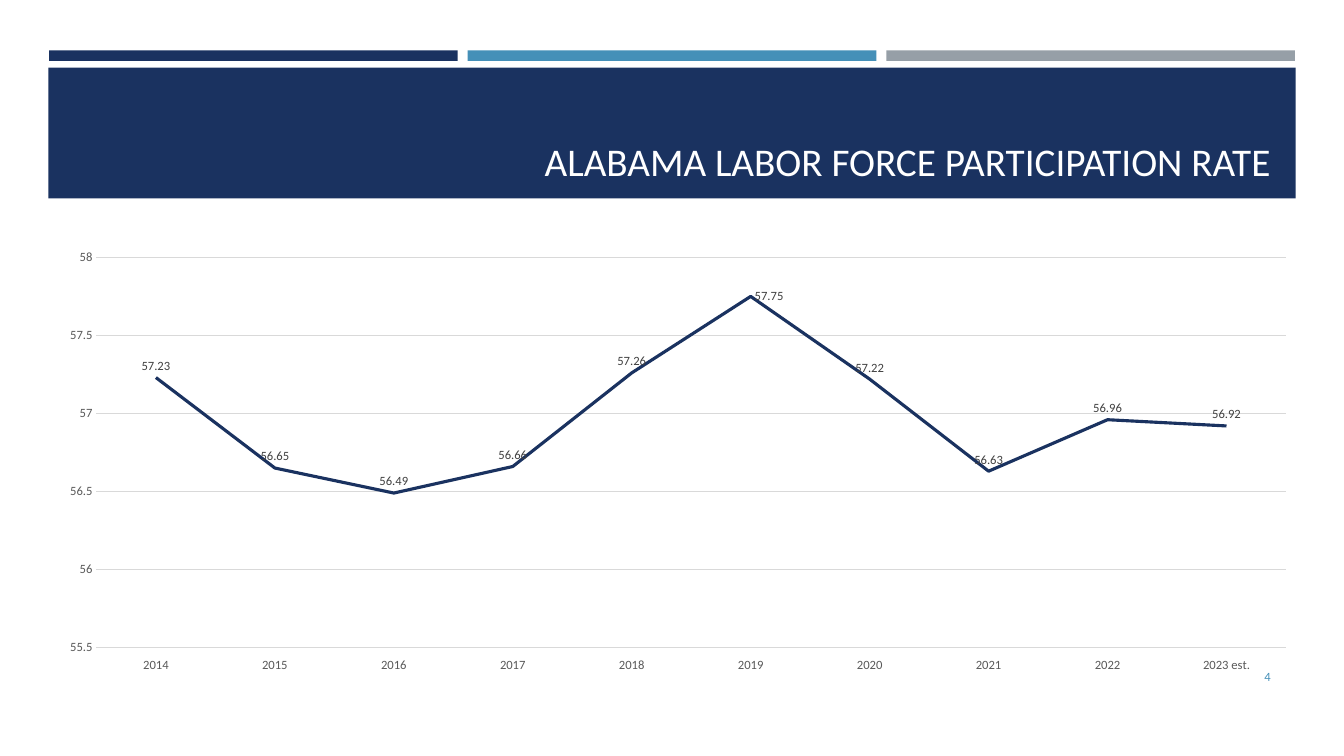
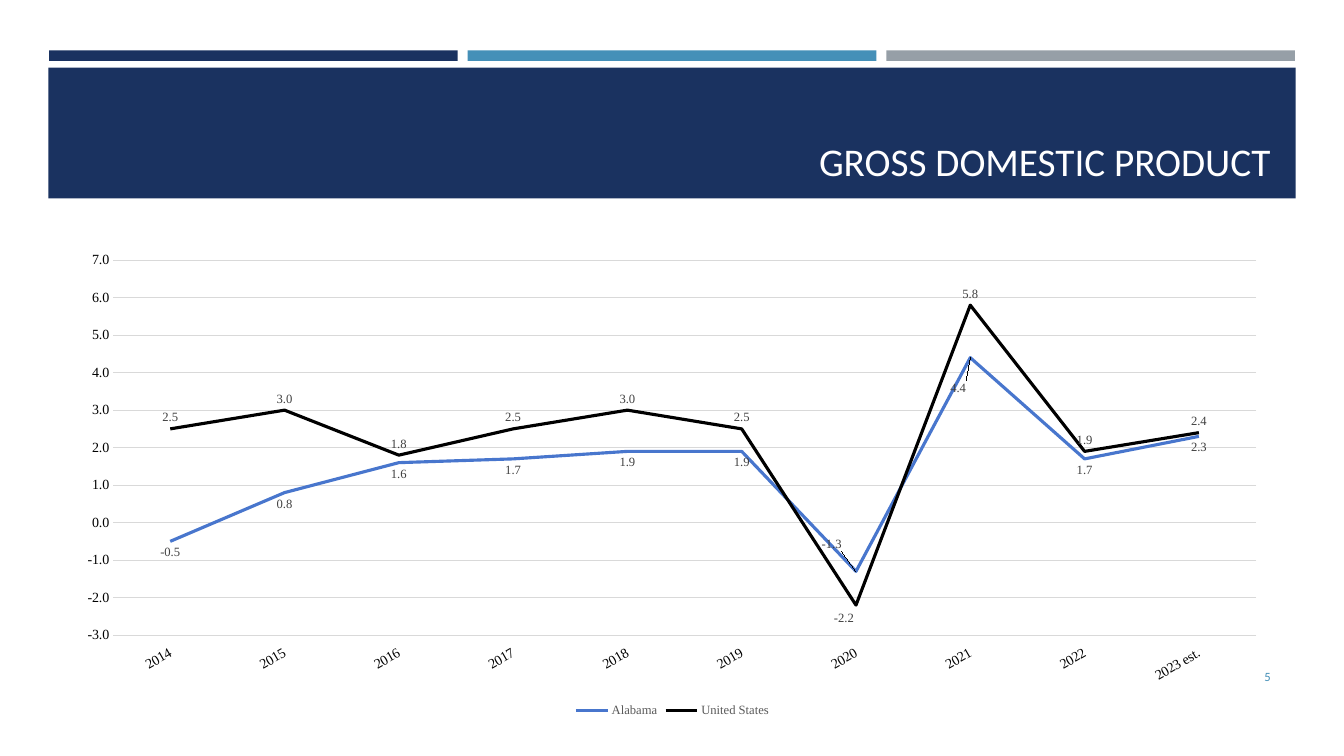
from lxml import etree
from pptx import Presentation
from pptx import util as u
from pptx.chart import data
from pptx.dml.color import RGBColor
from pptx.enum import chart as ch, shapes, text
from pptx.oxml import ns

NAVY, BLUE, GRAY = "1A3260", "4590B8", "969FA7"
WHITE, BLACK, RULE, DIM, DARK = "FFFFFF", "000000", "D9D9D9", "595959", "404040"
SANS, SERIF = "Calibri", "Times New Roman"
YEARS = [str(y) for y in range(2014, 2023)] + ["2023 est."]
POS = ch.XL_LABEL_POSITION


def color(code):
    return RGBColor.from_string(code)


class Deck:
    """Holds the shared style and the current slide; lengths are percent of the slide."""

    def __init__(self):
        self.prs = Presentation()
        self.prs.slide_width = u.Inches(13.33)
        self.prs.slide_height = u.Inches(7.5)

    def box(self, x, y, w, h):
        wide, high = self.prs.slide_width, self.prs.slide_height
        return [int(part * side / 100) for part, side in
                ((x, wide), (y, high), (w, wide), (h, high))]

    def style(self, font, size, code, face=SANS):
        font.size, font.name = u.Pt(size), face
        font.color.rgb = color(code)

    def stroke(self, line, code, width):
        line.color.rgb = color(code)
        line.width = u.Pt(width)

    def page(self, title, number):
        self.slide = self.prs.slides.add_slide(self.prs.slide_layouts[5])
        self.band(3.6, 8.93, 92.8, 17.33, NAVY)
        for i, code in enumerate((NAVY, BLUE, GRAY)):
            self.band(3.65 + i * 31.15, 6.67, 30.4, 1.4, code)
        self.title(title)
        self.number(number)

    def band(self, x, y, w, h, code):
        band = self.slide.shapes.add_shape(
            shapes.MSO_SHAPE.RECTANGLE, *self.box(x, y, w, h))
        band.shadow.inherit = False
        band.fill.solid()
        band.fill.fore_color.rgb = color(code)
        band.line.fill.background()
        self.slide.shapes._spTree.insert(2, band._element)

    def title(self, words):
        head = self.slide.shapes.title
        head.left, head.top, head.width, head.height = self.box(4.8, 10.27, 90.47, 14.8)
        self.words(head.text_frame, words, 28, WHITE, text.MSO_ANCHOR.BOTTOM)

    def number(self, value):
        note = self.slide.shapes.add_textbox(*self.box(86.65, 86.8, 8.63, 5.33))
        self.words(note.text_frame, str(value), 9, BLUE, text.MSO_ANCHOR.MIDDLE)

    def words(self, frame, words, size, code, anchor):
        frame.text, frame.word_wrap = words, True
        frame.vertical_anchor = anchor
        para = frame.paragraphs[0]
        para.alignment = text.PP_ALIGN.RIGHT
        self.style(para.font, size, code)

    def chart(self, area, plot, rows, scale, fmt, face, size, code):
        table = data.CategoryChartData(number_format=fmt)
        table.categories = YEARS
        for name, vals, *_ in rows:
            table.add_series(name, vals)
        graph = self.slide.shapes.add_chart(
            ch.XL_CHART_TYPE.LINE, *self.box(*area), table).chart
        graph.has_title = graph.has_legend = False
        self.style(graph.font, 10, BLACK, face)
        self.axes(graph, scale, fmt, face, size, code)
        self.place(graph._chartSpace.chart.plotArea, 0, plot, True)
        for line, (_, _, tint, spot, moves) in zip(graph.plots[0].series, rows):
            line.smooth = False
            self.stroke(line.format.line, tint, 2.25)
            self.labels(line, spot, moves, fmt, face)
        return graph

    def axes(self, graph, scale, fmt, face, size, code):
        cat, val = graph.category_axis, graph.value_axis
        for axis in (cat, val):
            axis.major_tick_mark = axis.minor_tick_mark = ch.XL_TICK_MARK.NONE
            self.style(axis.tick_labels.font, size, code, face)
        cat.tick_label_position = ch.XL_TICK_LABEL_POSITION.LOW
        self.stroke(cat.format.line, RULE, 0.75)
        val.minimum_scale, val.maximum_scale, val.major_unit = scale
        val.tick_labels.number_format = fmt
        val.tick_labels.number_format_is_linked = False
        val.format.line.fill.background()
        self.stroke(val.major_gridlines.format.line, RULE, 0.75)

    def labels(self, line, spot, moves, fmt, face):
        tags = line.data_labels
        tags.show_value, tags.position = True, spot
        tags.number_format, tags.number_format_is_linked = fmt, False
        self.style(tags.font, 9, DARK, face)
        for i, (side, shift) in moves.items():
            tag = line.points[i].data_label
            self.style(tag.font, 9, DARK, face)
            tag.position = side
            if shift:
                nodes = tags._element.findall(ns.qn("c:dLbl"))
                node = next(n for n in nodes
                            if n.find(ns.qn("c:idx")).get("val") == str(i))
                self.place(node, 1, shift)

    def place(self, node, at, spots, inner=False):
        for old in node.findall(ns.qn("c:layout")):
            node.remove(old)
        outer = etree.Element(ns.qn("c:layout"))
        hand = etree.SubElement(outer, ns.qn("c:manualLayout"))
        pairs = list(zip("xywh", spots))
        if inner:
            pairs = [("layoutTarget", "inner"), ("xMode", "edge"), ("yMode", "edge")] + pairs
        for key, val in pairs:
            etree.SubElement(hand, ns.qn(f"c:{key}")).set("val", str(val))
        node.insert(at, outer)

    def tilt(self, graph, angle):
        body = graph.category_axis._element.find(
            f"{ns.qn('c:txPr')}/{ns.qn('a:bodyPr')}")
        body.set("rot", str(angle * 60000))
        body.set("vert", "horz")

    def legend(self, graph, face):
        graph.has_legend = True
        graph.legend.position = ch.XL_LEGEND_POSITION.BOTTOM
        graph.legend.include_in_layout = False
        self.style(graph.legend.font, 9, DIM, face)


def main():
    deck = Deck()
    deck.page("ALABAMA LABOR FORCE PARTICIPATION RATE", 4)
    rates = [57.23, 56.65, 56.49, 56.66, 57.26, 57.75, 57.22, 56.63, 56.96, 56.92]
    deck.chart((3.45, 31.73, 93.17, 58), (0.04, 0.04, 0.95, 0.89),
               [("Series 1", rates, NAVY, POS.ABOVE, {5: (POS.RIGHT, None)})],
               (55.5, 58, 0.5), "General", SANS, 9, DIM)

    deck.page("GROSS DOMESTIC PRODUCT", 5)
    state = [-0.5, 0.8, 1.6, 1.7, 1.9, 1.9, -1.3, 4.4, 1.7, 2.3]
    nation = [2.5, 3, 1.8, 2.5, 3, 2.5, -2.2, 5.8, 1.9, 2.4]
    low = {6: (POS.BELOW, (-0.02, -0.08)), 7: (POS.BELOW, (-0.01, 0.04))}
    high = {6: (POS.ABOVE, (-0.01, 0.05))}
    graph = deck.chart((4.8, 31.87, 90.47, 63.6), (0.04, 0.04, 0.94, 0.78),
                       [("Alabama", state, "4876CD", POS.BELOW, low),
                        ("United States", nation, BLACK, POS.ABOVE, high)],
                       (-3, 7, 1), "0.0", SERIF, 10, BLACK)
    deck.tilt(graph, -30)
    deck.legend(graph, SERIF)
    deck.prs.save("out.pptx")


if __name__ == "__main__":
    main()
